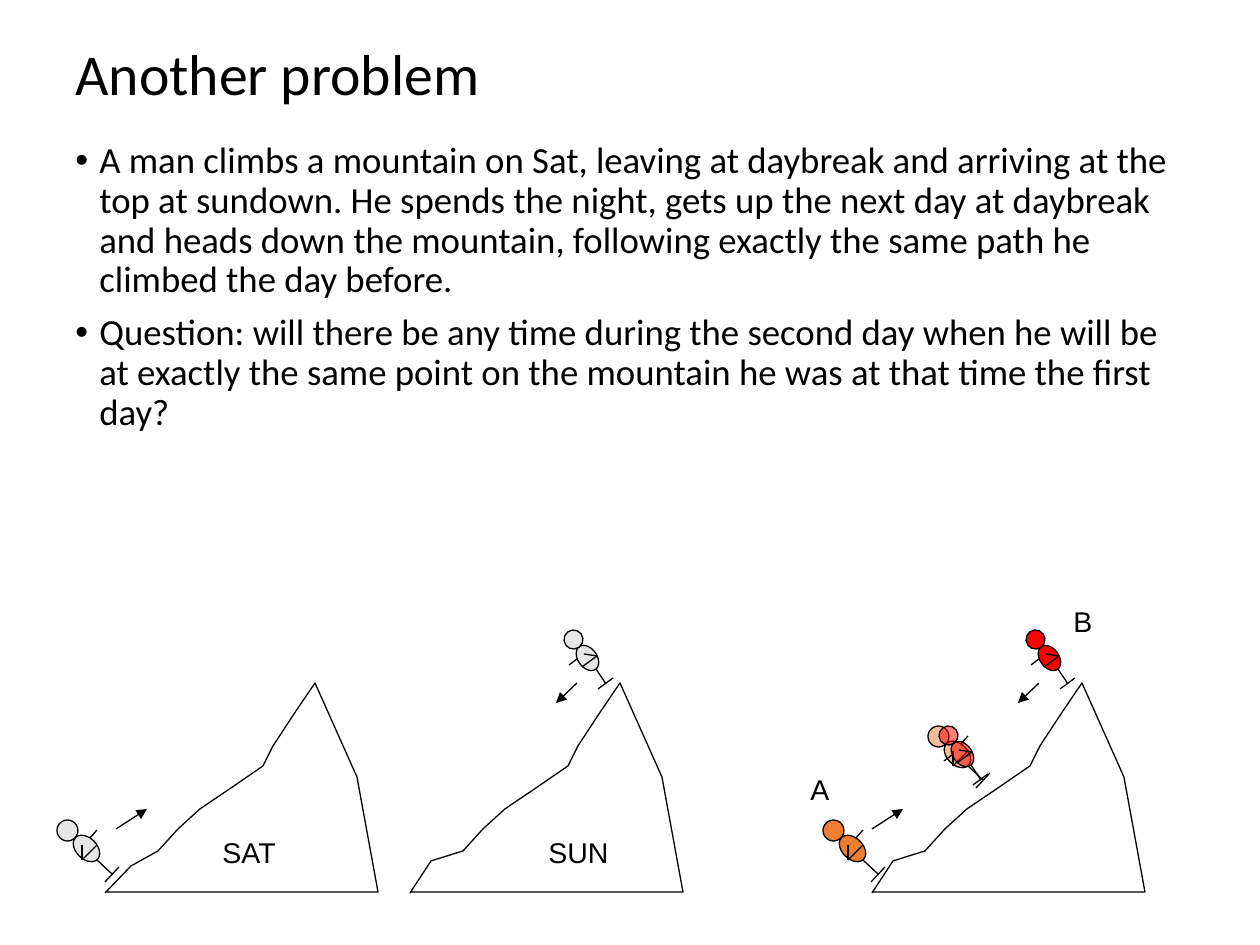
from dataclasses import dataclass

from lxml.etree import SubElement
from pptx import Presentation
from pptx.dml.color import RGBColor
from pptx.enum.shapes import MSO_CONNECTOR, MSO_SHAPE
from pptx.enum.text import MSO_ANCHOR, MSO_AUTO_SIZE
from pptx.oxml.ns import qn
from pptx.util import Emu, Pt

SCALE = 914400 / 126


@dataclass(frozen=True)
class Theme:
    ink: str = "000000"
    gray: str = "E7E6E6"
    orange: str = "ED7D31"
    red: str = "FF0000"
    text_font: str = "Calibri"
    label_font: str = "Arial"
    title_size: float = 33
    body_size: float = 21
    label_size: float = 16.3
    line_width: float = 0.75


@dataclass(frozen=True)
class Figure:
    head: tuple
    body: tuple
    rotation: float
    limbs: tuple


THEME = Theme()

CLIMBER = Figure(
    head=(0, 0, 21, 21), body=(19, 13, 21, 31), rotation=315,
    limbs=((40, 40, 55, 54), (48, 62, 62, 47), (25, 25, 25, 40),
           (25, 40, 40, 25), (33, 18, 40, 10)))
DESCENDER = Figure(
    head=(0, 0, 19, 19), body=(14, 14, 19, 28), rotation=323.7,
    limbs=((32, 39, 42, 54), (49, 48, 34, 59), (20, 24, 33, 26),
           (33, 26, 18, 37), (13, 29, 5, 35)))

RIDGE = ((53, 851), (73, 829), (95, 809), (126, 788), (158, 766), (168, 746),
         (189, 714), (210, 683), (252, 777), (273, 892), (0, 892))

PARAGRAPHS = (
    "A man climbs a mountain on Sat, leaving at daybreak and arriving at the "
    "top at sundown. He spends the night, gets up the next day at daybreak "
    "and heads down the mountain, following exactly the same path he climbed "
    "the day before.",
    "Question: will there be any time during the second day when he will be "
    "at exactly the same point on the mountain he was at that time the first "
    "day?",
)


def px(n):
    return Emu(round(n * SCALE))


def add_bullet(p, indent):
    pPr = p._p.get_or_add_pPr()
    pPr.set("marL", str(px(indent)))
    pPr.set("indent", str(-px(indent)))
    SubElement(pPr, qn("a:buFont")).set("typeface", "Arial")
    SubElement(pPr, qn("a:buChar")).set("char", "•")


def add_text(shapes, box, *lines, font, size, anchor=MSO_ANCHOR.TOP,
             wrap=True, spacing=None, before=None, indent=None):
    tb = shapes.add_textbox(*map(px, box))
    tf = tb.text_frame
    tf.word_wrap = wrap
    tf.auto_size = MSO_AUTO_SIZE.NONE if wrap else MSO_AUTO_SIZE.SHAPE_TO_FIT_TEXT
    tf.vertical_anchor = anchor
    for i, line in enumerate(lines):
        p = tf.add_paragraph() if i else tf.paragraphs[0]
        p.line_spacing = spacing
        if before is not None:
            p.space_before = Pt(before)
        if indent is not None:
            add_bullet(p, indent)
        r = p.add_run()
        r.text = line
        r.font.name = font
        r.font.size = Pt(size)
        r.font.color.rgb = RGBColor.from_string(THEME.ink)


def add_label(shapes, text, x, y, w):
    add_text(shapes, (x, y, w, 47), text, font=THEME.label_font,
             size=THEME.label_size, wrap=False)


def set_line(shape):
    shape.line.color.rgb = RGBColor.from_string(THEME.ink)
    shape.line.width = Pt(THEME.line_width)


def add_line(shapes, x1, y1, x2, y2, arrow=False):
    cxn = shapes.add_connector(MSO_CONNECTOR.STRAIGHT, *map(px, (x1, y1, x2, y2)))
    set_line(cxn)
    spPr = cxn._element.spPr
    if arrow:
        SubElement(spPr.find(qn("a:ln")), qn("a:tailEnd")).set("type", "triangle")
    SubElement(spPr, qn("a:effectLst"))


def add_ellipse(shapes, box, color, rotation, alpha=None):
    sp = shapes.add_shape(MSO_SHAPE.OVAL, *map(px, box))
    sp.rotation = rotation
    sp.shadow.inherit = False
    sp.fill.solid()
    sp.fill.fore_color.rgb = RGBColor.from_string(color)
    set_line(sp)
    if alpha is not None:
        clr = sp._element.spPr.find(qn("a:solidFill")).find(qn("a:srgbClr"))
        SubElement(clr, qn("a:alpha")).set("val", str(alpha * 1000))


def add_figure(shapes, figure, x, y, color, alpha=None):
    for dx, dy, w, h in (figure.body, figure.head):
        add_ellipse(shapes, (x + dx, y + dy, w, h), color, figure.rotation, alpha)
    for x1, y1, x2, y2 in figure.limbs:
        add_line(shapes, x + x1, y + y1, x + x2, y + y2)


def add_mountain(shapes, x, foothill=(21, 861)):
    fb = shapes.build_freeform(x, 893, scale=SCALE)
    fb.add_line_segments([(x + dx, y) for dx, y in (foothill, *RIDGE)], close=False)
    sp = fb.convert_to_shape()
    sp.shadow.inherit = False
    sp.fill.background()
    set_line(sp)


def add_two_days(s):
    shapes = s.shapes.add_group_shape().shapes
    add_mountain(shapes, 105, foothill=(26, 866))
    add_mountain(shapes, 410)
    add_figure(shapes, CLIMBER, 57, 820, THEME.gray)
    add_line(shapes, 116, 829, 147, 809, arrow=True)
    add_figure(shapes, DESCENDER, 564, 630, THEME.gray)
    add_line(shapes, 577, 683, 556, 703, arrow=True)
    add_label(shapes, "SAT", 210, 829, 79)
    add_label(shapes, "SUN", 536, 829, 86)


def add_meeting(s):
    shapes = s.shapes.add_group_shape().shapes
    add_mountain(shapes, 872)
    add_figure(shapes, DESCENDER, 1026, 630, THEME.red)
    add_line(shapes, 1039, 683, 1018, 703, arrow=True)
    add_figure(shapes, CLIMBER, 823, 820, THEME.orange)
    add_line(shapes, 872, 829, 903, 809, arrow=True)
    add_figure(shapes, CLIMBER, 928, 726, THEME.orange, alpha=50)
    add_figure(shapes, DESCENDER, 939, 726, THEME.red, alpha=50)
    add_label(shapes, "A", 798, 766, 44)
    add_label(shapes, "B", 1061, 598, 44)


def main():
    prs = Presentation()
    prs.slide_width, prs.slide_height = px(1260), px(945)
    s = prs.slides.add_slide(prs.slide_layouts[6])
    add_text(s.shapes, (63, 38, 1134, 78), "Another problem",
             font=THEME.text_font, size=THEME.title_size,
             anchor=MSO_ANCHOR.MIDDLE, spacing=0.9)
    add_text(s.shapes, (63, 136, 1134, 504), *PARAGRAPHS,
             font=THEME.text_font, size=THEME.body_size,
             spacing=0.9, before=7.5, indent=24)
    add_two_days(s)
    add_meeting(s)
    prs.save("out.pptx")


if __name__ == "__main__":
    main()
